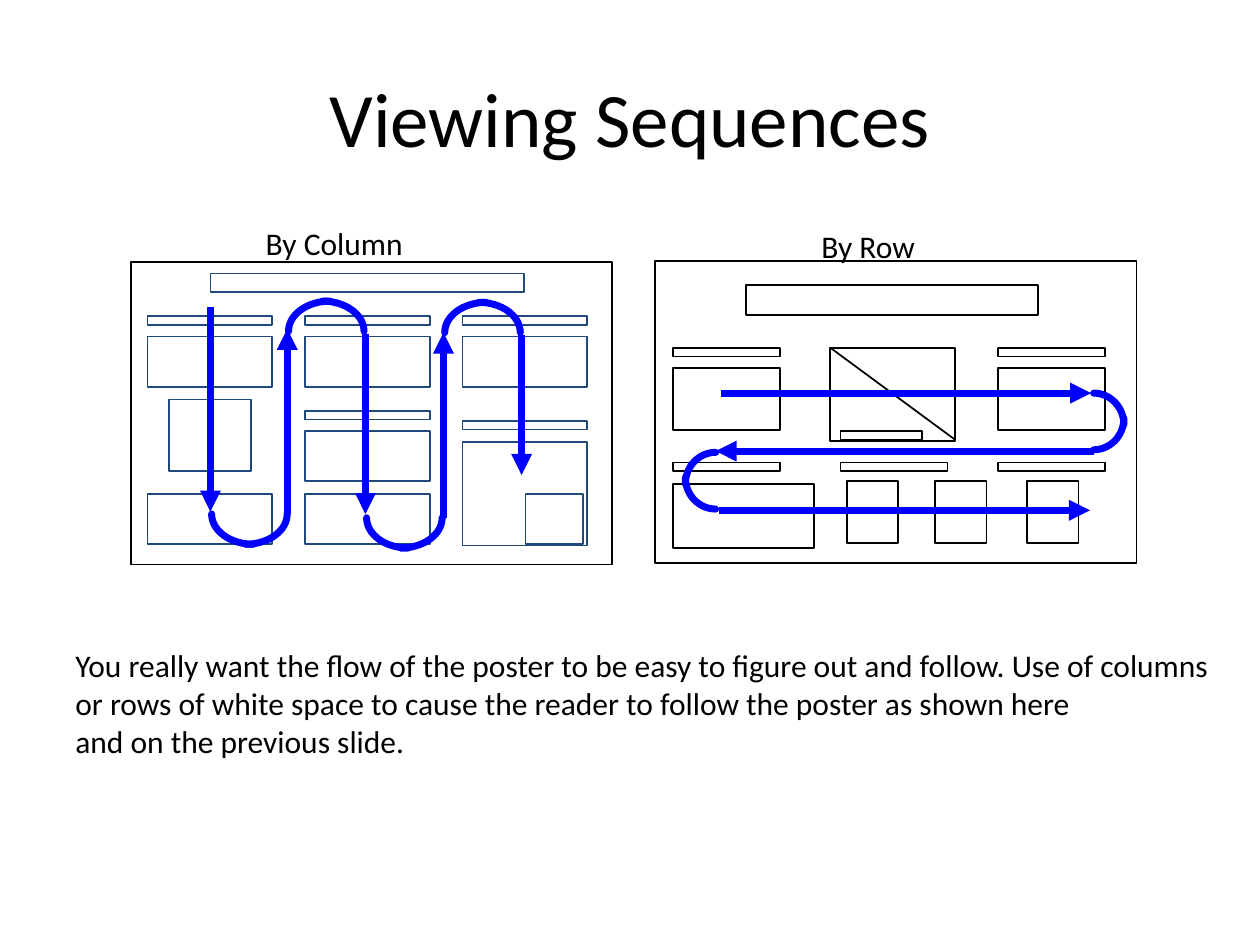
import math
from lxml import etree
from pptx import Presentation
from pptx.dml.color import RGBColor
from pptx.enum import shapes, text
from pptx.oxml import ns
from pptx.util import Inches, Pt

COLORS = {"black": "000000", "white": "FFFFFF", "navy": "1F497D", "blue": "0000FF"}
RGB = {name: RGBColor.from_string(value) for name, value in COLORS.items()}

prs = Presentation()
prs.slide_width, prs.slide_height = Inches(10), Inches(7.5)
s = prs.slides.add_slide(prs.slide_layouts[5])


def add_box(x, y, w, h, color):
    sp = s.shapes.add_shape(shapes.MSO_SHAPE.RECTANGLE, Inches(x), Inches(y), Inches(w), Inches(h))
    sp.shadow.inherit = False
    sp.fill.solid()
    sp.fill.fore_color.rgb = RGB["white"]
    sp.line.color.rgb = RGB[color]
    sp.line.width = Pt(1)


def add_line(x1, y1, x2, y2, color, width, arrow):
    ln = s.shapes.add_connector(
        shapes.MSO_CONNECTOR.STRAIGHT, Inches(x1), Inches(y1), Inches(x2), Inches(y2))
    ln.line.color.rgb = RGB[color]
    ln.line.width = Pt(width)
    if arrow:
        etree.SubElement(ln.line._get_or_add_ln(), ns.qn("a:tailEnd"), type="triangle")
    etree.SubElement(ln._element.spPr, ns.qn("a:effectLst"))


# Title
s.shapes.title.left, s.shapes.title.top = Inches(0.5), Inches(0.3)
s.shapes.title.width, s.shapes.title.height = Inches(9), Inches(1.25)
tf = s.shapes.title.text_frame
tf.text = "Viewing Sequences"
tf.vertical_anchor = text.MSO_ANCHOR.MIDDLE
p = tf.paragraphs[0]
p.alignment = text.PP_ALIGN.CENTER
p.font.size, p.font.name, p.font.color.rgb = Pt(44), "Calibri", RGB["black"]

# Column poster: frame, banner, then headings and panels as (top, height)
add_box(1.04, 2.08, 3.82, 2.4, "black")
add_box(1.67, 2.17, 2.49, 0.15, "navy")
column_panels = [
    [(3.92, 0.4)],
    [(3.26, 0.07), (3.42, 0.4), (3.92, 0.4)],
    [(3.34, 0.07), (3.51, 0.82)],
]
for i, panels in enumerate(column_panels):
    for y, h in [(2.51, 0.07), (2.67, 0.4)] + panels:
        add_box(1.17 + 1.25 * i, y, 0.99, h, "navy")
add_box(1.34, 3.17, 0.65, 0.57, "navy")
add_box(4.17, 3.92, 0.46, 0.4, "navy")

# Row poster: frame, banner, headings, panels and the crossed picture panel
add_box(5.2, 2.07, 3.82, 2.4, "black")
add_box(5.92, 2.26, 2.32, 0.24, "black")
for x in (5.34, 7.92):
    add_box(x, 2.76, 0.85, 0.07, "black")
    add_box(x, 2.92, 0.85, 0.49, "black")
for x in (5.34, 6.67, 7.92):
    add_box(x, 3.67, 0.85, 0.07, "black")
add_box(5.34, 3.84, 1.12, 0.51, "black")
for x in (6.72, 7.42, 8.15):
    add_box(x, 3.82, 0.41, 0.49, "black")
add_box(6.59, 2.76, 0.99, 0.74, "black")
add_box(6.67, 3.42, 0.65, 0.07, "black")
add_line(6.59, 2.76, 7.58, 3.49, "black", 1, False)

# Reading path: straight arrows
for ends in [
    (1.67, 2.44, 1.67, 4.06), (2.28, 4.08, 2.28, 2.61), (2.9, 2.65, 2.9, 4.08),
    (3.52, 4.11, 3.52, 2.64), (4.14, 2.66, 4.14, 3.77),
    (5.72, 3.12, 8.66, 3.12), (8.68, 3.58, 5.68, 3.58), (5.71, 4.05, 8.65, 4.05),
]:
    add_line(*ends, "blue", 4, True)

# Reading path: quarter turns as (left, top, width, height, right side, bottom side)
STEPS = 16
quarter_turns = []
for x, y, bottom in [(1.68, 4.08, 1), (2.29, 2.39, 0), (2.91, 4.11, 1), (3.53, 2.4, 0)]:
    quarter_turns += [(x, y, 0.33, 0.24, 0, bottom), (x + 0.27, y, 0.33, 0.24, 1, bottom)]
for x, y, right in [(8.68, 3.12, 1), (5.44, 3.59, 0)]:
    quarter_turns += [(x, y, 0.24, 0.25, right, 0), (x, y + 0.2, 0.24, 0.25, right, 1)]
for x, y, w, h, right, bottom in quarter_turns:
    points = []
    for i in range(STEPS + 1):
        angle = math.pi / 2 * i / STEPS
        u, v = math.cos(angle), math.sin(angle)
        points.append((Inches(x + w * (u if right else 1 - u)),
                       Inches(y + h * (v if bottom else 1 - v))))
    builder = s.shapes.build_freeform(*points[0])
    builder.add_line_segments(points[1:], close=False)
    sp = builder.convert_to_shape()
    sp.shadow.inherit = False
    sp.fill.background()
    sp.line.color.rgb = RGB["blue"]
    sp.line.width = Pt(4)
    sp.line._get_or_add_ln().set("cap", "rnd")

# Captions and advice
for x, y, w, h, lines in [
    (2.01, 1.73, 1.71, 0.4, ["By Column"]),
    (6.42, 1.75, 1.2, 0.4, ["By Row"]),
    (0.5, 5.08, 9.37, 1.01, [
        "You really want the flow of the poster to be easy to figure out and follow. Use of columns",
        "or rows of white space to cause the reader to follow the poster as shown here",
        "and on the previous slide."]),
]:
    tf = s.shapes.add_textbox(Inches(x), Inches(y), Inches(w), Inches(h)).text_frame
    tf.word_wrap = False
    tf.auto_size = text.MSO_AUTO_SIZE.SHAPE_TO_FIT_TEXT
    tf.text = "\n".join(lines)
    for p in tf.paragraphs:
        p.font.size, p.font.name, p.font.color.rgb = Pt(18), "Calibri", RGB["black"]

prs.save("out.pptx")
